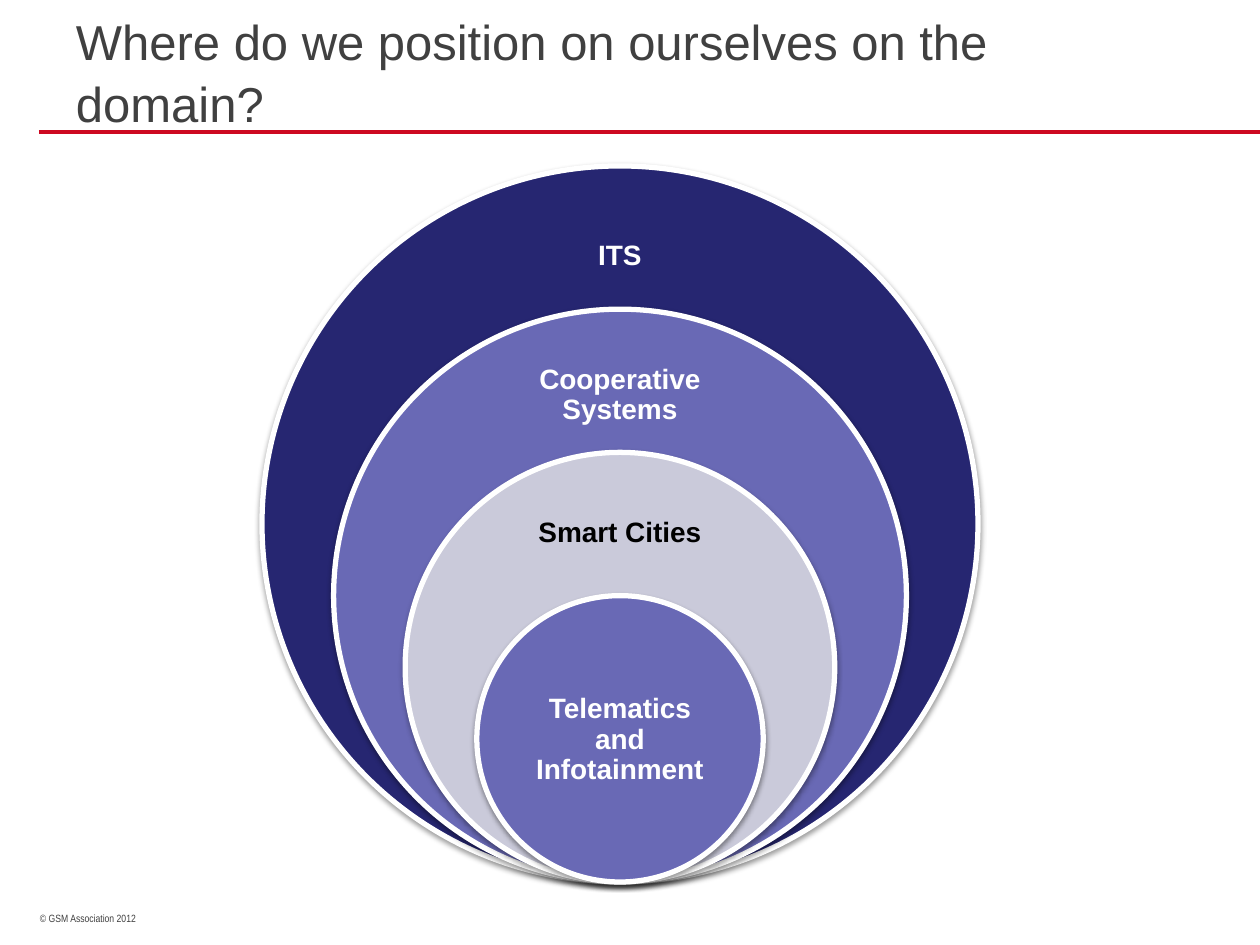
from lxml import etree
from pptx import Presentation
from pptx.dml.color import RGBColor
from pptx.enum.shapes import MSO_CONNECTOR as Connector, MSO_SHAPE as Shape
from pptx.enum.text import MSO_ANCHOR as Anchor, MSO_AUTO_SIZE as AutoSize, PP_ALIGN as Align
from pptx.oxml import parse_xml
from pptx.oxml.ns import nsdecls, qn
from pptx.util import Emu, Pt

EMU_PER_PX = 914400 / 126
COLORS = {
    "white": "FFFFFF", "black": "000000", "grey": "404040", "red": "CD0921",
    "navy": "262671", "violet": "6969B5", "pale": "CACADA",
}

# Nested circles share a centre line and a bottom edge
CENTER_X, BOTTOM, OUTER_DIAMETER = 620, 882, 716
LABEL_WIDTH = 202
# label, fill, text colour, label top, label height
RINGS = [
    ("ITS", "navy", "white", 203, 107),
    ("Cooperative Systems", "violet", "white", 344, 103),
    ("Smart Cities", "pale", "black", 485, 97),
    ("Telematics and Infotainment", "violet", "white", 668, 144),
]


def px(value):
    return Emu(round(value * EMU_PER_PX))


def color(name):
    return RGBColor.from_string(COLORS[name])


def write(shape, text, size, color_name, insets, font="Arial", bold=False,
          anchor=Anchor.TOP, align=Align.LEFT, spacing=1.0):
    frame = shape.text_frame
    frame.text = text
    frame.word_wrap = True
    frame.auto_size = AutoSize.NONE
    frame.vertical_anchor = anchor
    frame.margin_left, frame.margin_top, frame.margin_right, frame.margin_bottom = map(px, insets)
    paragraph = frame.paragraphs[0]
    paragraph.alignment = align
    paragraph.line_spacing = spacing
    for run in paragraph.runs:
        run.font.name = font
        run.font.size = Pt(size)
        run.font.bold = bold
        run.font.color.rgb = color(color_name)


def add_title(slide, text):
    title = slide.shapes.title
    title.left, title.top, title.width, title.height = px(63), px(0), px(1134), px(96)
    write(title, text, 28, "grey", (13, 9, 13, 6), spacing=1.05)


def add_text(slide, box, *args, **formats):
    write(slide.shapes.add_textbox(*map(px, box)), *args, **formats)


def add_rule(slide, left, right, y):
    rule = slide.shapes.add_connector(Connector.STRAIGHT, px(left), px(y), px(right), px(y))
    rule.line.color.rgb = color("red")
    rule.line.width = Pt(2.25)
    etree.SubElement(rule._element.spPr, qn("a:effectLst"))


def add_circle(slide, diameter, fill):
    circle = slide.shapes.add_shape(
        Shape.OVAL, px(CENTER_X - diameter / 2), px(BOTTOM - diameter), px(diameter), px(diameter))
    circle.fill.solid()
    circle.fill.fore_color.rgb = color(fill)
    circle.line.color.rgb = color("white")
    circle.line.width = Pt(3)
    # Soft shadow straight below
    circle._element.spPr.append(parse_xml(
        f'<a:effectLst {nsdecls("a")}>'
        f'<a:outerShdw blurRad="{Pt(3.1)}" dist="{Pt(1.6)}" dir="5400000" rotWithShape="0">'
        f'<a:srgbClr val="{COLORS["black"]}"><a:alpha val="38000"/></a:srgbClr>'
        '</a:outerShdw></a:effectLst>'))


def main():
    presentation = Presentation()
    presentation.slide_width, presentation.slide_height = px(1260), px(945)
    slide = presentation.slides.add_slide(presentation.slide_layouts[5])

    # Heading and footer
    add_title(slide, "Where do we position on ourselves on the domain?")
    add_rule(slide, 39, 1260, 132)
    add_text(slide, (39, 906, 197, 25), "© GSM Association 2012", 6, "grey",
             (1, 6, 13, 6), font="Arial Narrow")

    # Nested domains, each a fifth of the outer diameter smaller
    for index, (label, fill, text_color, top, height) in enumerate(RINGS):
        add_circle(slide, OUTER_DIAMETER * (5 - index) / 5, fill)
        add_text(slide, (CENTER_X - LABEL_WIDTH / 2, top, LABEL_WIDTH, height),
                 label, 16, text_color, (15, 15, 15, 15), bold=True,
                 anchor=Anchor.MIDDLE, align=Align.CENTER, spacing=0.9)

    presentation.save("out.pptx")


if __name__ == "__main__":
    main()
